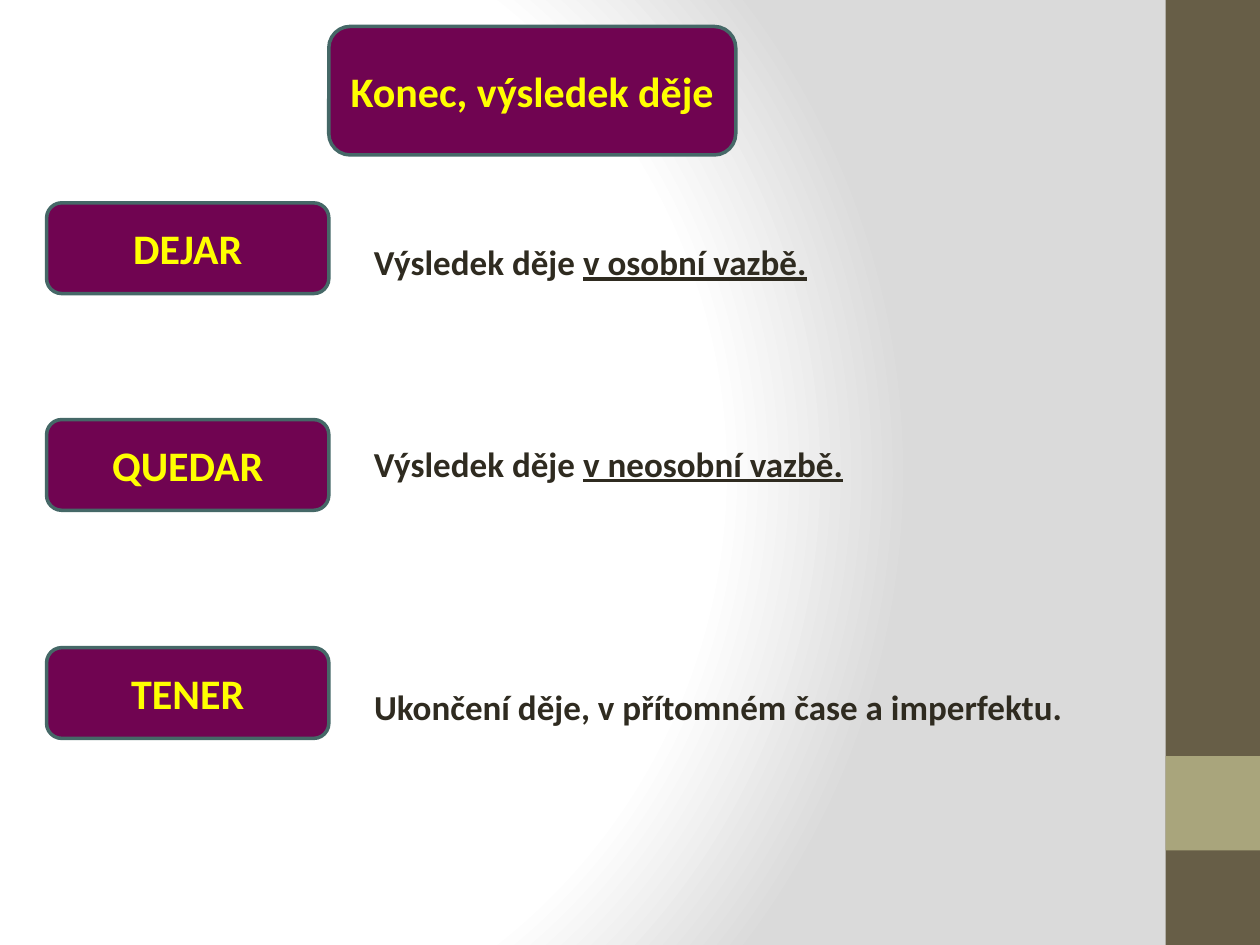
"""Build a slide on Spanish verbs that express the end or result of an action."""
from pptx import Presentation
from pptx import util as u
from pptx.dml.color import RGBColor
from pptx.enum import shapes, text
from pptx.oxml import parse_xml
from pptx.oxml.ns import nsdecls, qn

PLUM = RGBColor(0x70, 0x04, 0x51)
TEAL = RGBColor(0x45, 0x68, 0x67)
YELLOW = RGBColor(0xFF, 0xFF, 0x00)
INK = RGBColor(0x2F, 0x2B, 0x20)
BROWN = RGBColor(0x67, 0x5E, 0x47)
OLIVE = RGBColor(0xA9, 0xA5, 0x7C)
WHITE = RGBColor(0xFF, 0xFF, 0xFF)
GREY = RGBColor(0xDA, 0xDA, 0xDA)


class SlideBuilder:
    """Hold the style and the current slide."""

    font = "Calibri"
    box_size = u.Pt(24)
    note_size = u.Pt(20)

    def __init__(self, slide):
        self.slide = slide

    def background(self, stops, focus):
        self.slide.background.fill.gradient()
        gradient = next(self.slide.element.iter(qn("a:gradFill")))
        stop_xml = "".join(
            f'<a:gs pos="{position * 1000}"><a:srgbClr val="{color}"/></a:gs>'
            for position, color in stops
        )
        edges = " ".join(f'{side}="{value * 1000}"' for side, value in zip("ltrb", focus))
        radial = parse_xml(
            f'<a:gradFill {nsdecls("a")} rotWithShape="1"><a:gsLst>{stop_xml}</a:gsLst>'
            f'<a:path path="circle"><a:fillToRect {edges}/></a:path></a:gradFill>'
        )
        gradient.getparent().replace(gradient, radial)

    def shape(self, kind, bounds, fill):
        shape = self.slide.shapes.add_shape(kind, *map(u.Inches, bounds))
        shape.shadow.inherit = False
        shape.fill.solid()
        shape.fill.fore_color.rgb = fill
        return shape

    def band(self, bounds, fill):
        self.shape(shapes.MSO_SHAPE.RECTANGLE, bounds, fill).line.fill.background()

    def box(self, bounds, label):
        shape = self.shape(shapes.MSO_SHAPE.ROUNDED_RECTANGLE, bounds, PLUM)
        shape.line.color.rgb = TEAL
        shape.line.width = u.Pt(2)
        frame = shape.text_frame
        frame.word_wrap = True
        frame.vertical_anchor = text.MSO_ANCHOR.MIDDLE
        paragraph = frame.paragraphs[0]
        paragraph.alignment = text.PP_ALIGN.CENTER
        self.run(paragraph, label, self.box_size, YELLOW)

    def note(self, bounds, plain, underlined):
        frame = self.slide.shapes.add_textbox(*map(u.Inches, bounds)).text_frame
        frame.word_wrap = False
        frame.auto_size = text.MSO_AUTO_SIZE.SHAPE_TO_FIT_TEXT
        paragraph = frame.paragraphs[0]
        self.run(paragraph, plain, self.note_size, INK)
        if underlined:
            self.run(paragraph, underlined, self.note_size, INK).font.underline = True

    def run(self, paragraph, words, size, color):
        run = paragraph.add_run()
        run.text = words
        run.font.name = self.font
        run.font.size = size
        run.font.bold = True
        run.font.color.rgb = color
        return run


def main():
    presentation = Presentation()
    presentation.slide_width = u.Inches(10)
    presentation.slide_height = u.Inches(7.5)
    builder = SlideBuilder(presentation.slides.add_slide(presentation.slide_layouts[6]))

    builder.background([(0, WHITE), (75, WHITE), (100, GREY)], (20, 50, 100, 50))
    builder.band((9.25, 0, 0.75, 7.5), BROWN)
    builder.band((9.25, 6, 0.75, 0.75), OLIVE)
    builder.box((2.61, 0.21, 3.23, 1.02), "Konec, výsledek děje")

    verbs = [
        ("DEJAR", 1.61, 1.86, 3.67, "Výsledek děje ", "v osobní vazbě."),
        ("QUEDAR", 3.33, 3.46, 3.96, "Výsledek děje ", "v neosobní vazbě."),
        ("TENER", 5.14, 5.39, 5.71, "Ukončení děje, v přítomném čase a imperfektu.", ""),
    ]
    for verb, box_top, note_top, note_width, plain, underlined in verbs:
        builder.box((0.37, box_top, 2.24, 0.72), verb)
        builder.note((2.87, note_top, note_width, 0.44), plain, underlined)

    presentation.save("out.pptx")


if __name__ == "__main__":
    main()
